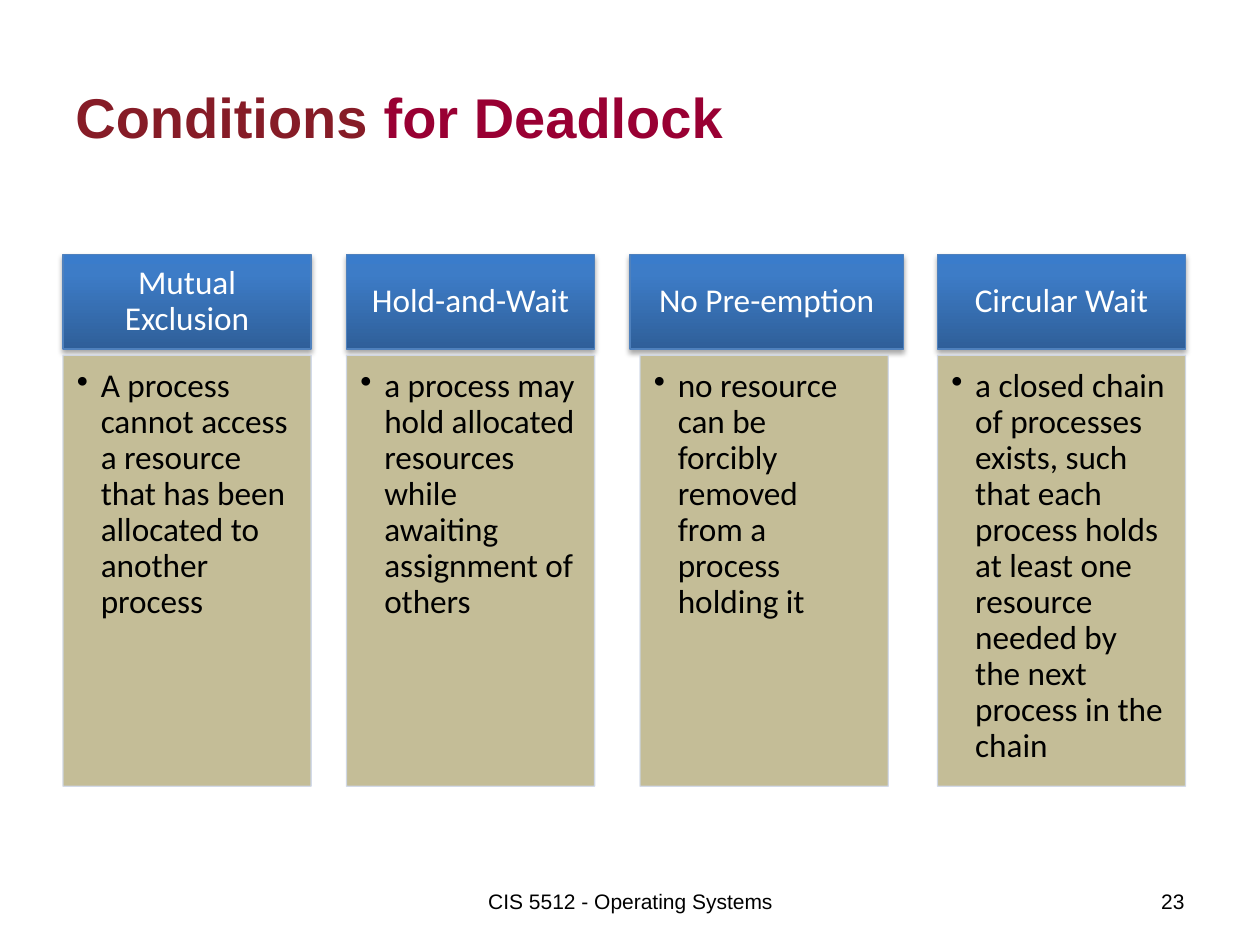
from copy import deepcopy
from dataclasses import dataclass

from lxml.etree import SubElement as Sub
from pptx import Presentation
from pptx.dml.color import RGBColor as Rgb
from pptx.enum.shapes import MSO_SHAPE as Kind
from pptx.enum.text import MSO_ANCHOR as Anchor, PP_ALIGN as Align
from pptx.oxml.ns import qn
from pptx.util import Inches, Pt


@dataclass(frozen=True)
class Theme:
    """Colours, fonts and type sizes of the slide."""
    maroon: str = "861C27"
    wine: str = "990033"
    black: str = "000000"
    white: str = "FFFFFF"
    tan: str = "C4BD97"
    pale: str = "D0D8E8"
    edge: str = "4F81BD"
    blend: tuple = ((0, "2F5F99"), (0.8, "3D7CC7"), (1, "3A7CCB"))
    sans: str = "Arial"
    body: str = "Calibri"
    big: int = 32
    mid: int = 19
    small: int = 12


LOOK = Theme()
WIDE = 1.97
CARDS = (
    (0.5, WIDE, 0.5, "Mutual Exclusion",
     "A process cannot access a resource that has been allocated to another process"),
    (2.75, WIDE, 2.75, "Hold-and-Wait",
     "a process may hold allocated resources while awaiting assignment of others"),
    (5, 2.17, 5.08, "No Pre-emption",
     "no resource can be forcibly removed from a process holding it"),
    (7.44, WIDE, 7.44, "Circular Wait",
     "a closed chain of processes exists, such that each process holds "
     "at least one resource needed by the next process in the chain"),
)


def style(run, face, size, color, bold=False):
    """Set the font of one run."""
    font = run.font
    font.name, font.size, font.bold = face, Pt(size), bold
    font.color.rgb = Rgb.from_string(color)


def frame(shape, anchor, pads):
    """Set wrap, anchor and insets, and return the text frame."""
    text = shape.text_frame
    text.word_wrap = True
    text.vertical_anchor = anchor
    (text.margin_left, text.margin_top,
     text.margin_right, text.margin_bottom) = map(Inches, pads)
    return text


def label(slide, box, parts, size, align, bold=False):
    """Add a line of text made of coloured parts."""
    shape = slide.shapes.add_textbox(*map(Inches, box))
    para = frame(shape, Anchor.MIDDLE, (0.1, 0.05, 0.1, 0.05)).paragraphs[0]
    para.alignment = align
    for words, color in parts:
        run = para.add_run()
        run.text = words
        style(run, LOOK.sans, size, color, bold)


def panel(slide, box, edge):
    """Add a thinly outlined rectangle."""
    shape = slide.shapes.add_shape(Kind.RECTANGLE, *map(Inches, box))
    shape.shadow.inherit = False
    shape.line.color.rgb = Rgb.from_string(edge)
    shape.line.width = Pt(0.75)
    return shape


def write(text, words, color, align):
    """Fill a panel with one paragraph."""
    para = text.paragraphs[0]
    para.text = words
    para.alignment = align
    para.line_spacing = 0.9
    style(para.runs[0], LOOK.body, LOOK.mid, color)


def shade(shape):
    """Give a shape the upward blend."""
    shape.fill.gradient()
    shape.fill.gradient_angle = 90
    stops = shape._element.spPr.find(f".//{qn('a:gsLst')}")
    stops.insert(1, deepcopy(stops[0]))
    for stop, (place, color) in zip(shape.fill.gradient_stops, LOOK.blend):
        stop.position = place
        stop.color.rgb = Rgb.from_string(color)


def fade(node, share):
    """Make a colour node partly clear."""
    Sub(node, qn("a:alpha"), val=str(share * 1000))


def cast(shape):
    """Add a soft shadow below a shape."""
    list_ = shape._element.spPr.find(qn("a:effectLst"))
    drop = Sub(list_, qn("a:outerShdw"), blurRad=str(Pt(3.1)),
               dist=str(Pt(1.8)), dir="5400000", rotWithShape="0")
    fade(Sub(drop, qn("a:srgbClr"), val=LOOK.black), 35)


def head(slide, left, width, words):
    """Add the blue heading of a card."""
    shape = panel(slide, (left, 2.02, width, 0.75), LOOK.edge)
    shade(shape)
    cast(shape)
    text = frame(shape, Anchor.MIDDLE, (0.15, 0.08, 0.15, 0.08))
    write(text, words, LOOK.white, Align.CENTER)


def body(slide, left, words):
    """Add the tan panel of a card with its bullet."""
    shape = panel(slide, (left, 2.82, WIDE, 3.42), LOOK.pale)
    shape.fill.solid()
    shape.fill.fore_color.rgb = Rgb.from_string(LOOK.tan)
    fade(shape._element.spPr.find(f"{qn('a:ln')}//{qn('a:srgbClr')}"), 90)
    text = frame(shape, Anchor.TOP, (0.11, 0.11, 0.15, 0.17))
    write(text, words, LOOK.black, Align.LEFT)
    props = text.paragraphs[0]._p.get_or_add_pPr()
    dent = Inches(0.19)
    props.set("marL", str(dent))
    props.set("indent", str(-dent))
    Sub(props, qn("a:buChar"), char="•")


def main():
    """Build and save the slide."""
    deck = Presentation()
    deck.slide_width, deck.slide_height = Inches(10), Inches(7.5)
    slide = deck.slides.add_slide(deck.slide_layouts[6])
    label(slide, (0.5, 0.3, 9, 1.25),
          (("Conditions", LOOK.maroon), (" for Deadlock", LOOK.wine)),
          LOOK.big, Align.LEFT, True)
    label(slide, (3.42, 6.95, 3.17, 0.4),
          (("CIS 5512 - Operating Systems", LOOK.black),),
          LOOK.small, Align.CENTER)
    label(slide, (7.17, 6.95, 2.33, 0.4), (("23", LOOK.black),),
          LOOK.small, Align.RIGHT)
    for left, width, inner, title, words in CARDS:
        head(slide, left, width, title)
        body(slide, inner, words)
    deck.save("out.pptx")


if __name__ == "__main__":
    main()
